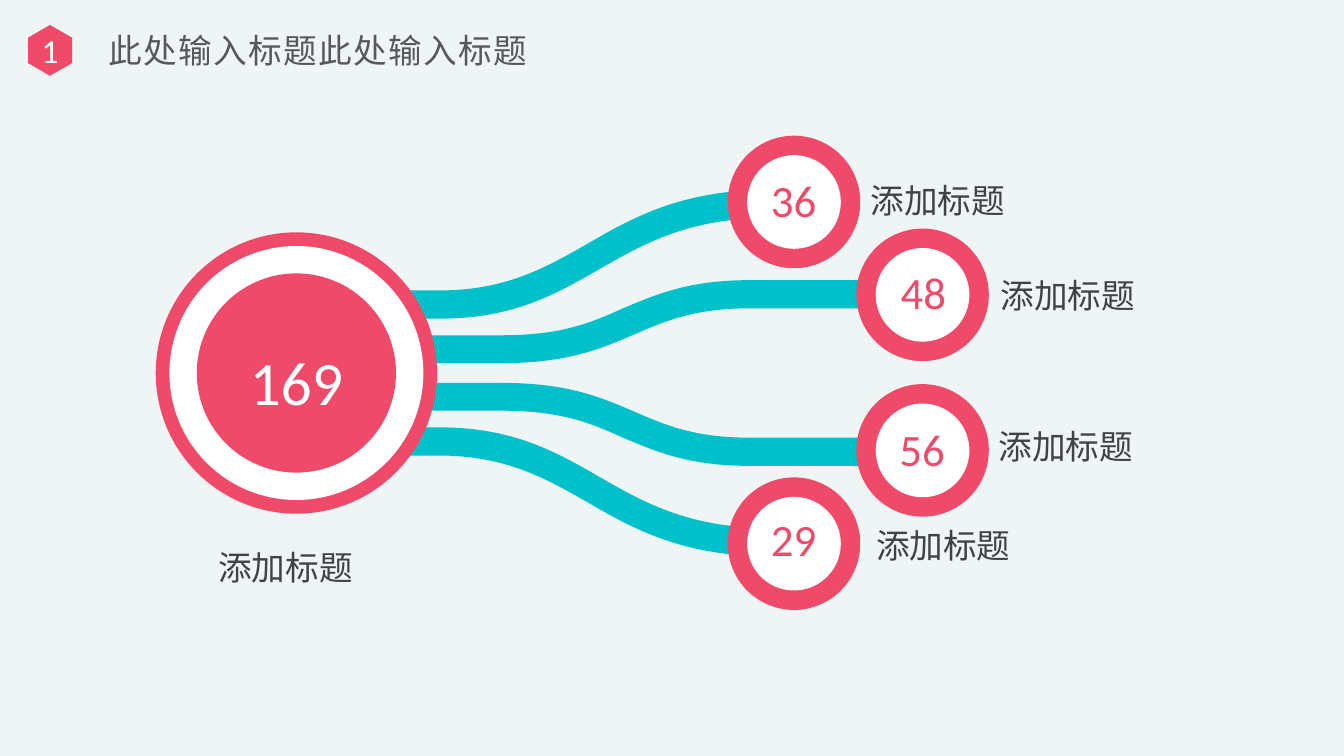
import math
from dataclasses import dataclass

import pptx
import pptx.dml.color
import pptx.enum.shapes
import pptx.enum.text
import pptx.oxml.ns
import pptx.util
from lxml import etree

Cm = pptx.util.Cm
PRESET = pptx.enum.shapes.MSO_SHAPE
ALIGN = pptx.enum.text.PP_ALIGN
ANCHOR = pptx.enum.text.MSO_ANCHOR
qn = pptx.oxml.ns.qn
Point = tuple[float, float]

COLOURS = {
    "background": "EFF5F5",
    "rose": "EF4A6A",
    "teal": "00C1CA",
    "white": "FFFFFF",
    "label": "404344",
    "title": "55595B",
}
LATIN_FONT = "Calibri"
CHINESE_FONT = "Noto Sans CJK SC"
LABEL = "添加标题"
SLIDE_SIZE = (33.87, 19.05)
MIRROR_SUM = 18.8  # upper y + lower y of mirrored parts, in cm


@dataclass
class Ribbon:
    """A band between two edges, each made of two joined cubic curves."""
    end: float
    upper: list[Point]
    lower: list[Point]


@dataclass
class Node:
    """A ring with its number and label; places in cm."""
    value: str
    centre: Point
    number_centre: Point
    label_at: Point


RIBBON_START = 5.79
RIBBON_CURVES = (1, 4, 10, 13)  # first segment of each curve in an outline
RIBBONS = [
    Ribbon(23.32,
           [(12.67, 8.45), (14.15, 8.45), (14.91, 8.13), (15.7, 7.77),
            (16.54, 7.42), (17.35, 7.06), (18.9, 7.06)],
           [(12.67, 9.15), (14.3, 9.15), (15.14, 8.79), (15.98, 8.43),
            (16.74, 8.1), (17.48, 7.77), (18.9, 7.77)]),
    Ribbon(20.29,
           [(11.07, 7.32), (12.73, 7.32), (13.72, 6.76), (14.76, 6.17),
            (15.93, 5.49), (17.17, 4.78), (19.43, 4.78)],
           [(11.07, 8.03), (12.93, 8.03), (14, 7.42), (15.11, 6.78),
            (16.21, 6.15), (17.35, 5.49), (19.43, 5.49)]),
]
NODES = [
    Node("36", (20.01, 5.09), (20, 5.05), (21.69, 4.42)),
    Node("48", (23.25, 7.43), (23.27, 7.37), (24.97, 6.81)),
    Node("56", (23.25, 11.35), (23.24, 11.32), (24.92, 10.62)),
    Node("29", (20.01, 13.7), (20, 13.59), (21.83, 13.11)),
]
NODE_RINGS = [(3.34, "rose"), (2.36, "white")]
HUB_CENTRE = (7.47, 9.4)
HUB_RINGS = [(7.09, "rose"), (6.4, "white"), (5.02, "rose")]


def rgb(colour: str) -> pptx.dml.color.RGBColor:
    return pptx.dml.color.RGBColor.from_string(COLOURS[colour])


def paint(shape, colour: str) -> None:
    shape.shadow.inherit = False
    shape.fill.solid()
    shape.fill.fore_color.rgb = rgb(colour)
    shape.line.fill.background()


def write(frame, text: str, *, size: float, colour: str, font: str = LATIN_FONT,
          align=ALIGN.LEFT, anchor=ANCHOR.TOP, wrap: bool = False,
          spacing: float = 0) -> None:
    frame.word_wrap = wrap
    frame.vertical_anchor = anchor
    para = frame.paragraphs[0]
    para.alignment = align
    span = para.add_run()
    span.text = text
    span.font.size = pptx.util.Pt(size)
    span.font.name = font
    span.font.color.rgb = rgb(colour)
    properties = span.font._element
    properties.set("spc", str(int(spacing * 100)))
    east_asian = etree.SubElement(properties, qn("a:ea"))
    east_asian.set("typeface", CHINESE_FONT)


def add_text(page, text: str, left: float, top: float, width: float,
             height: float, **style) -> None:
    box = page.shapes.add_textbox(Cm(left), Cm(top), Cm(width), Cm(height))
    write(box.text_frame, text, **style)


def add_number(page, text: str, centre: Point, width: float, height: float,
               **style) -> None:
    x, y = centre
    add_text(page, text, x - width / 2, y - height / 2, width, height,
             align=ALIGN.CENTER, **style)


def add_label(page, at: Point) -> None:
    add_text(page, LABEL, *at, 3.94, 1.27, size=24, colour="label")


def add_preset(page, preset, left: float, top: float, width: float,
               height: float, colour: str) -> None:
    shape = page.shapes.add_shape(preset, Cm(left), Cm(top), Cm(width), Cm(height))
    paint(shape, colour)


def add_rings(page, centre: Point, rings: list[tuple[float, str]]) -> None:
    x, y = centre
    for diameter, colour in rings:
        add_preset(page, PRESET.OVAL, x - diameter / 2, y - diameter / 2,
                   diameter, diameter, colour)


def add_outline(page, points: list[Point], colour: str):
    corners = [(Cm(x), Cm(y)) for x, y in points]
    builder = page.shapes.build_freeform(*corners[0])
    builder.add_line_segments(corners[1:], close=True)
    shape = builder.convert_to_shape()
    paint(shape, colour)
    return shape


def bend(shape, curve_starts: tuple[int, ...]) -> None:
    """Turn three straight segments from each start into one cubic curve."""
    segments = list(shape._element.iter(qn("a:lnTo")))
    for start in curve_starts:
        curve = etree.Element(qn("a:cubicBezTo"))
        segments[start].addprevious(curve)
        for segment in segments[start:start + 3]:
            curve.append(segment[0])
            segment.getparent().remove(segment)


def ribbon_edge(knots: list[Point], end: float) -> list[Point]:
    return [(RIBBON_START, knots[0][1]), *knots, (end, knots[-1][1])]


def add_ribbon_pair(page, ribbon: Ribbon) -> None:
    upper = ribbon_edge(ribbon.upper, ribbon.end)
    lower = ribbon_edge(ribbon.lower, ribbon.end)
    outline = upper + lower[::-1]
    mirrored = [(x, MIRROR_SUM - y) for x, y in outline]
    for points in (outline, mirrored):
        bend(add_outline(page, points, "teal"), RIBBON_CURVES)


def add_heading(page) -> None:
    title = page.shapes.title
    page.shapes._spTree.append(title._element)  # in front of the backdrop
    title.left, title.top, title.width, title.height = (
        Cm(2.22), Cm(0.51), Cm(12.93), Cm(1.5))
    frame = title.text_frame
    frame.margin_left, frame.margin_right = Cm(0.51), Cm(0.25)
    frame.margin_top = frame.margin_bottom = Cm(0.13)
    write(frame, "此处输入标题此处输入标题", size=24, colour="title",
          font=CHINESE_FONT, anchor=ANCHOR.MIDDLE, wrap=True, spacing=1)

    # Numbered hexagon, standing on a corner
    angles = [math.radians(60 * corner - 90) for corner in range(6)]
    hexagon = add_outline(page, [(1.26 + 0.64 * math.cos(a), 1.27 + 0.64 * math.sin(a))
                                 for a in angles], "rose")
    write(hexagon.text_frame, "1", size=24, colour="white", align=ALIGN.CENTER,
          anchor=ANCHOR.MIDDLE, wrap=True)


def main() -> None:
    deck = pptx.Presentation()
    deck.slide_width, deck.slide_height = map(Cm, SLIDE_SIZE)
    page = deck.slides.add_slide(deck.slide_layouts.get_by_name("Title Only"))

    # Backdrop, then the ribbons behind the rings
    add_preset(page, PRESET.RECTANGLE, 0, 0, *SLIDE_SIZE, "background")
    for ribbon in RIBBONS:
        add_ribbon_pair(page, ribbon)

    # Hub
    add_rings(page, HUB_CENTRE, HUB_RINGS)
    add_number(page, "169", (7.47, 9.6), 2.9, 2.13, size=44, colour="white")
    add_label(page, (5.25, 13.65))

    # Nodes
    for node in NODES:
        add_rings(page, node.centre, NODE_RINGS)
        add_number(page, node.value, node.number_centre, 1.68, 1.63,
                   size=32, colour="rose")
        add_label(page, node.label_at)

    add_heading(page)
    deck.save("out.pptx")


if __name__ == "__main__":
    main()
